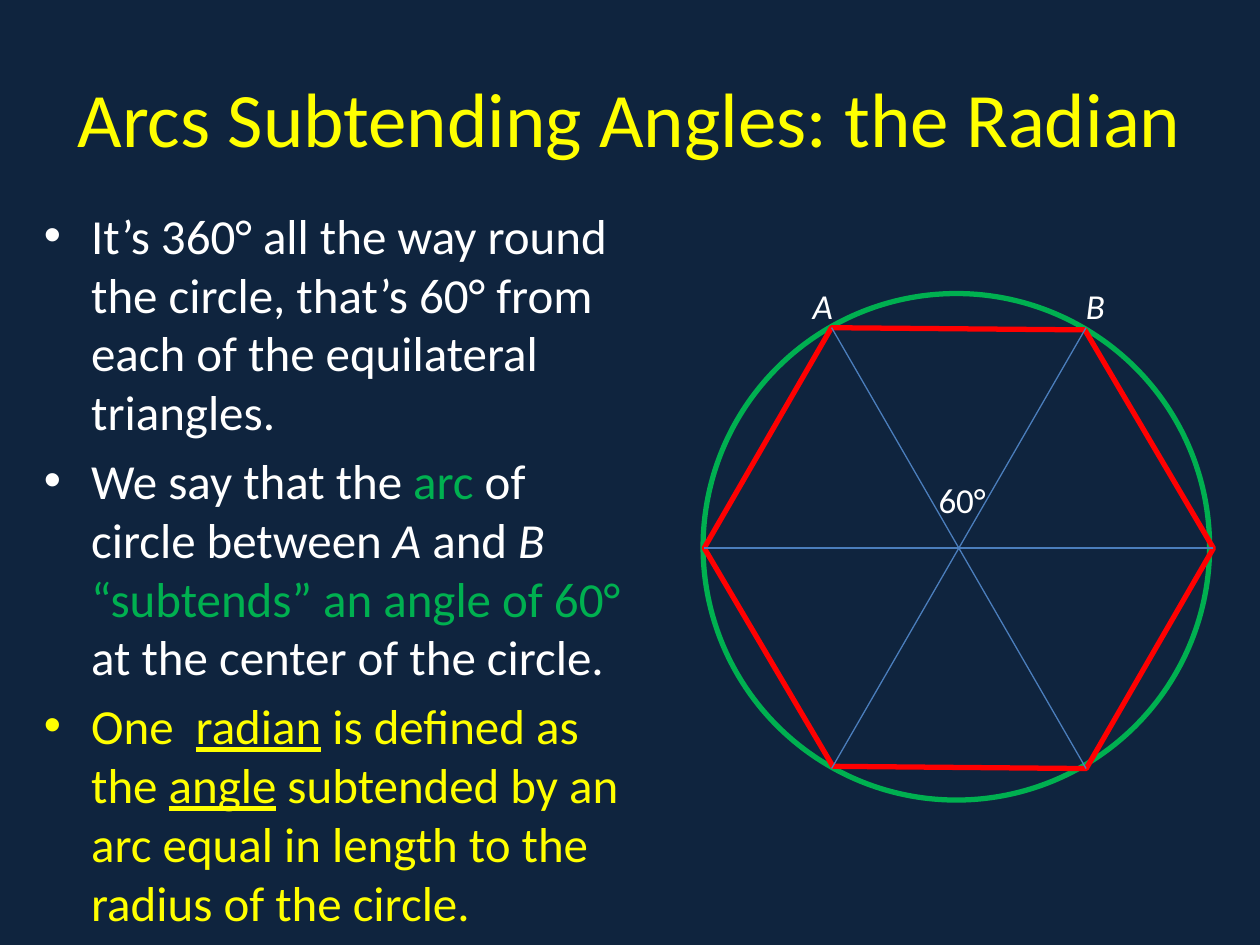
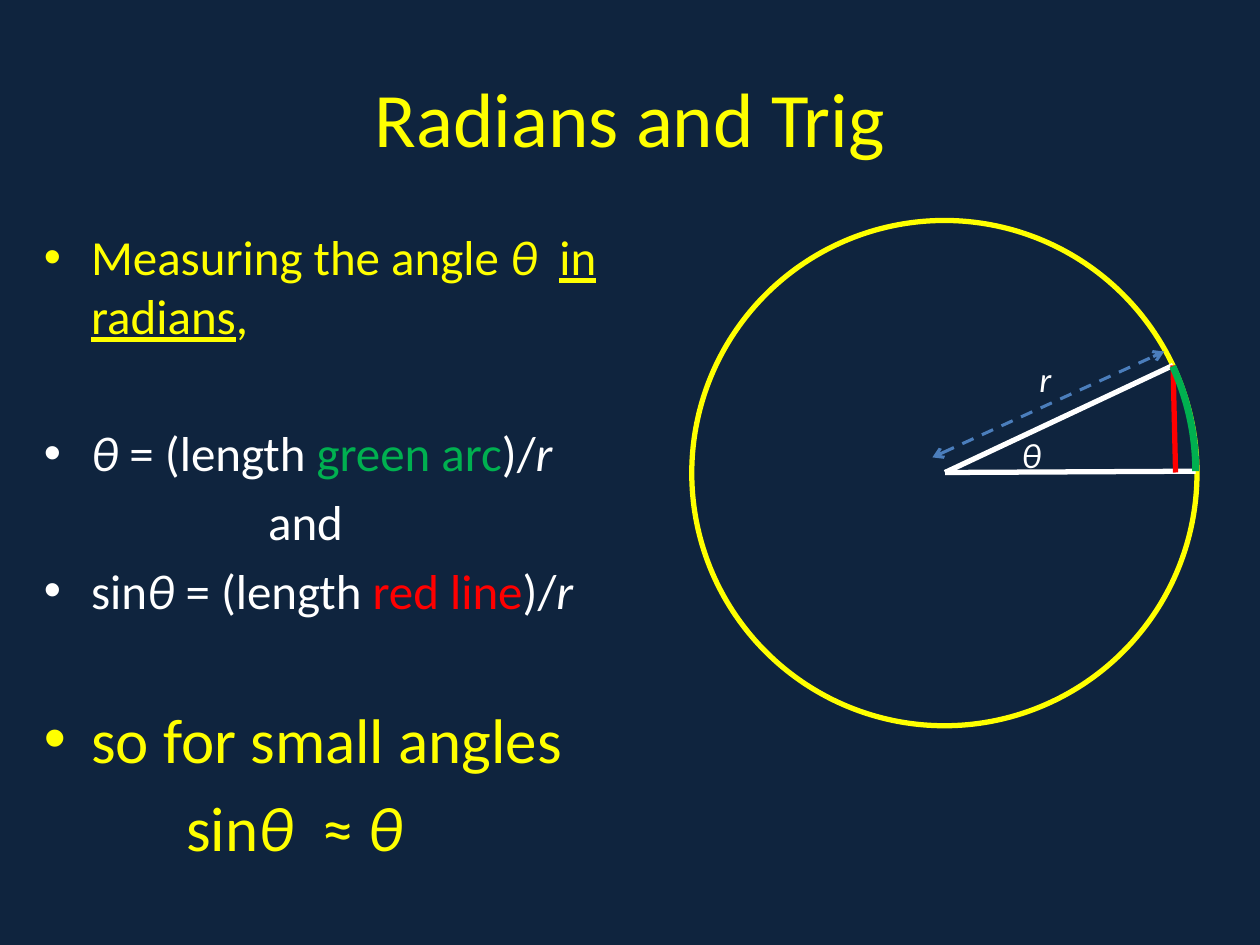
from dataclasses import dataclass
from math import cos, radians, sin

from lxml.etree import SubElement
from pptx import Presentation
from pptx.dml.color import RGBColor
from pptx.enum.dml import MSO_LINE_DASH_STYLE as Dash
from pptx.enum.shapes import MSO_CONNECTOR, MSO_SHAPE as Preset
from pptx.enum.text import MSO_ANCHOR, PP_ALIGN
from pptx.oxml.ns import qn
from pptx.slide import Slide
from pptx.util import Inches, Pt

COLORS = {
    "navy": "0F243E",
    "yellow": "FFFF00",
    "white": "FFFFFF",
    "green": "00B050",
    "red": "FF0000",
    "blue": "4B7EBC",
}
FONT = "Calibri"
WIDTH, HEIGHT = Inches(10), Inches(7.5)
COLUMN, ROW = WIDTH / 100, HEIGHT / 75
BODY_SIZE, LARGE_SIZE, LABEL_SIZE = 28, 36, 20
SPACE_SHARE, LINE_SHARE = 0.2, 1.2
BULLET_INDENT = 3.75
BLANK_LINE = BODY_SIZE * (LINE_SHARE + SPACE_SHARE)


@dataclass(frozen=True)
class Box:
    column: float
    row: float
    columns: float
    rows: float

    def place(self) -> tuple[int, int, int, int]:
        return (round(self.column * COLUMN), round(self.row * ROW),
                round(self.columns * COLUMN), round(self.rows * ROW))


@dataclass(frozen=True)
class Piece:
    text: str
    color: str = "white"
    italic: bool = False
    underline: bool = False


@dataclass(frozen=True)
class Entry:
    pieces: tuple[Piece, ...]
    size: int = BODY_SIZE
    indent: float = BULLET_INDENT
    bullet: bool = True
    extra_space: float = 0


@dataclass(frozen=True)
class Outline:
    preset: Preset
    box: Box
    color: str
    weight: float
    rotation: float = 0
    adjustments: tuple[float, ...] = ()


@dataclass(frozen=True)
class Segment:
    start: tuple[float, float]
    end: tuple[float, float]
    color: str
    weight: float
    measure: bool = False


@dataclass(frozen=True)
class Label:
    text: str
    box: Box
    italic: bool = True


TITLE_BOX = Box(5, 3, 90, 12.5)


def rgb(name: str) -> RGBColor:
    return RGBColor.from_string(COLORS[name])


def format_run(run, size: float, piece: Piece) -> None:
    font = run.font
    font.name, font.size = FONT, Pt(size)
    font.color.rgb = rgb(piece.color)
    font.italic, font.underline = piece.italic, piece.underline


def add_titled_slide(presentation, title: str) -> Slide:
    slide = presentation.slides.add_slide(presentation.slide_layouts[5])
    shape = slide.shapes.title
    shape.left, shape.top, shape.width, shape.height = TITLE_BOX.place()
    text_frame = shape.text_frame
    text_frame.text = title
    text_frame.vertical_anchor = MSO_ANCHOR.MIDDLE
    paragraph = text_frame.paragraphs[0]
    paragraph.alignment = PP_ALIGN.CENTER
    format_run(paragraph.runs[0], 44, Piece(title, "yellow"))
    return slide


def add_entries(slide: Slide, box: Box, entries: list[Entry]) -> None:
    text_frame = slide.shapes.add_textbox(*box.place()).text_frame
    text_frame.word_wrap = True
    for index, entry in enumerate(entries):
        paragraph = text_frame.add_paragraph() if index else text_frame.paragraphs[0]
        paragraph.space_before = Pt(entry.size * SPACE_SHARE + entry.extra_space)
        properties = paragraph._p.get_or_add_pPr()
        properties.set("marL", str(round(entry.indent * COLUMN)))
        if entry.bullet:
            properties.set("indent", str(-round(entry.indent * COLUMN)))
            SubElement(properties, qn("a:buFont"), typeface="Arial")
            SubElement(properties, qn("a:buChar"), char="•")
        for piece in entry.pieces:
            run = paragraph.add_run()
            run.text = piece.text
            format_run(run, entry.size, piece)


def add_outline(slide: Slide, outline: Outline) -> None:
    shape = slide.shapes.add_shape(outline.preset, *outline.box.place())
    shape.shadow.inherit = False
    shape.fill.background()
    shape.line.color.rgb = rgb(outline.color)
    shape.line.width = Pt(outline.weight)
    shape.rotation = outline.rotation
    for index, value in enumerate(outline.adjustments):
        shape.adjustments[index] = value


def add_segment(slide: Slide, segment: Segment) -> None:
    ends = [round(value * unit) for point in (segment.start, segment.end)
            for value, unit in zip(point, (COLUMN, ROW))]
    connector = slide.shapes.add_connector(MSO_CONNECTOR.STRAIGHT, *ends)
    line = connector.line
    line.color.rgb = rgb(segment.color)
    line.width = Pt(segment.weight)
    properties = connector._element.spPr
    if segment.measure:
        line.dash_style = Dash.DASH
        for tag in ("a:headEnd", "a:tailEnd"):
            SubElement(properties.find(qn("a:ln")), qn(tag), type="arrow")
    SubElement(properties, qn("a:effectLst"))


def add_label(slide: Slide, label: Label) -> None:
    text_frame = slide.shapes.add_textbox(*label.box.place()).text_frame
    text_frame.word_wrap = True
    text_frame.text = label.text
    format_run(text_frame.paragraphs[0].runs[0], LABEL_SIZE,
               Piece(label.text, italic=label.italic))


def hexagon_diameters(center: tuple[float, float], radius: float) -> list[Segment]:
    diameters = []
    for degrees in (60, 120, 180):
        across, down = radius * cos(radians(degrees)), radius * sin(radians(degrees))
        diameters.append(Segment((center[0] - across, center[1] - down),
                                 (center[0] + across, center[1] + down), "blue", 0.75))
    return diameters


def build_radian_slide(presentation) -> None:
    slide = add_titled_slide(presentation, "Arcs Subtending Angles: the Radian")
    add_entries(slide, Box(2.5, 15.8, 49.2, 55.8), [
        Entry((Piece("It’s 360° all the way round the circle, that’s 60° from each "
                     "of the equilateral triangles."),)),
        Entry((Piece("We say that the "), Piece("arc", "green"),
               Piece(" of circle between "), Piece("A", italic=True), Piece(" and "),
               Piece("B ", italic=True),
               Piece("“subtends” an angle of 60° ", "green"),
               Piece("at the center of the circle."))),
        Entry((Piece("One  ", "yellow"), Piece("radian", "yellow", underline=True),
               Piece(" is defined as the ", "yellow"),
               Piece("angle", "yellow", underline=True),
               Piece(" subtended by an arc equal in length to the radius of the circle.",
                     "yellow"))),
    ])
    add_outline(slide, Outline(Preset.OVAL, Box(55.8, 23.3, 40.2, 40.2), "green", 3))
    add_outline(slide, Outline(Preset.HEXAGON, Box(56.1, 26, 40, 35), "red", 3,
                               300, (0.283, 1.155)))
    for diameter in hexagon_diameters((76.1, 43.5), 20.2):
        add_segment(slide, diameter)
    for label in (Label("A", Box(63.5, 22.1, 9.2, 4.4)),
                  Label("B", Box(85.2, 22.1, 9.2, 4.4)),
                  Label("60°", Box(73.5, 37.5, 9.2, 4.4), italic=False)):
        add_label(slide, label)


def build_trig_slide(presentation) -> None:
    slide = add_titled_slide(presentation, "Radians and Trig")
    theta, radius = Piece("θ", italic=True), Piece("r", italic=True)
    add_entries(slide, Box(2.5, 17.5, 50, 49.5), [
        Entry((Piece("Measuring the angle ", "yellow"),
               Piece("θ  ", "yellow", italic=True),
               Piece("in radians", "yellow", underline=True), Piece(",", "yellow"))),
        Entry((theta, Piece(" = (length "), Piece("green arc", "green"),
               Piece(")/"), radius), extra_space=BLANK_LINE),
        Entry((Piece("and"),), indent=17.8, bullet=False),
        Entry((Piece("sin"), theta, Piece(" = (length "), Piece("red line", "red"),
               Piece(")/"), radius)),
        Entry((Piece("so for small angles", "yellow"),), LARGE_SIZE,
              extra_space=BLANK_LINE),
        Entry((Piece("sin", "yellow"), Piece("θ", "yellow", italic=True),
               Piece("  ≈ ", "yellow"), Piece("θ", "yellow", italic=True)),
              LARGE_SIZE, indent=11.3, bullet=False),
    ])
    center, arc_top = (75, 37.5), (93.1, 29)
    add_outline(slide, Outline(Preset.OVAL, Box(54.9, 17.5, 40.1, 40.1), "yellow", 3))
    for segment in (Segment(center, (94.9, 37.4), "white", 3),
                    Segment(center, arc_top, "white", 3),
                    Segment(arc_top, (93.3, 37.5), "red", 3),
                    Segment((74, 36.3), (92.4, 27.9), "blue", 1.75, measure=True)):
        add_segment(slide, segment)
    add_label(slide, Label("θ", Box(80.1, 33.9, 5, 4.4)))
    add_label(slide, Label("r", Box(81.5, 27.9, 5, 4.4)))
    add_outline(slide, Outline(Preset.ARC, Box(48.1, 15.9, 46.8, 43), "green", 4,
                               adjustments=(203.337, 0)))


def main() -> None:
    presentation = Presentation()
    presentation.slide_width, presentation.slide_height = WIDTH, HEIGHT
    background = presentation.slide_master.background.fill
    background.solid()
    background.fore_color.rgb = rgb("navy")
    build_radian_slide(presentation)
    build_trig_slide(presentation)
    presentation.save("out.pptx")


if __name__ == "__main__":
    main()
